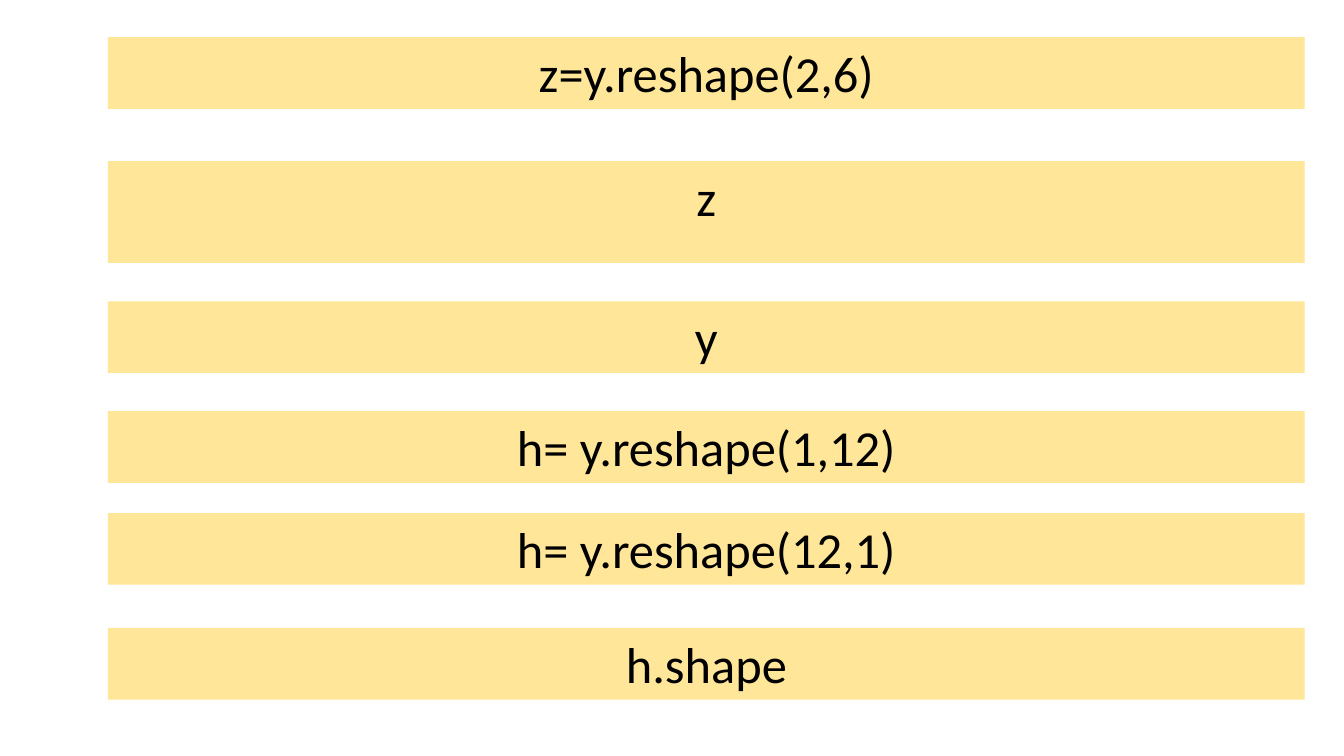
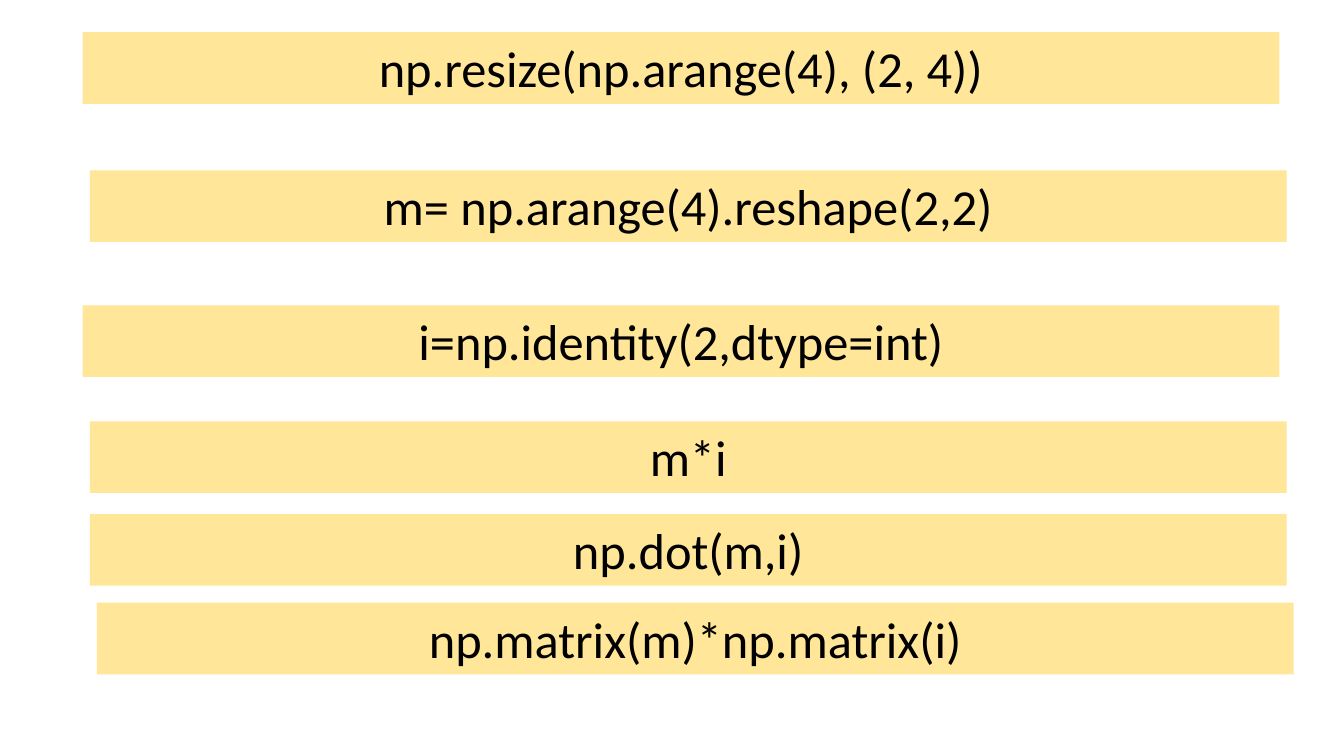
from dataclasses import dataclass

import pptx
import pptx.dml.color
import pptx.enum.shapes
import pptx.enum.text
import pptx.slide
import pptx.util


@dataclass(frozen=True)
class Theme:
    width: float = 13.33
    height: float = 7.5
    bar_fill: str = "FFE699"
    text_color: str = "000000"
    font: str = "Calibri"
    text_size: int = 36
    bar_width: float = 89.05
    bar_height: float = 9.47
    indent: float = 0.53


@dataclass(frozen=True)
class CodeBar:
    code: str
    top: float
    indents: int = 0
    height: float | None = None


@dataclass(frozen=True)
class CodeSlide:
    margin: float
    bars: tuple[CodeBar, ...]


THEME = Theme()

SLIDES = (
    CodeSlide(8.03, (
        CodeBar("z=y.reshape(2,6)", 4.93),
        CodeBar("z", 21.33, height=13.47),
        CodeBar("y", 39.87),
        CodeBar("h= y.reshape(1,12)", 54.4),
        CodeBar("h= y.reshape(12,1)", 67.87),
        CodeBar("h.shape", 83.07),
    )),
    CodeSlide(6.15, (
        CodeBar("np.resize(np.arange(4), (2, 4))", 4.27),
        CodeBar("m= np.arange(4).reshape(2,2)", 22.53, indents=1),
        CodeBar("i=np.identity(2,dtype=int)", 40.4),
        CodeBar("m*i", 55.73, indents=1),
        CodeBar("np.dot(m,i)", 68, indents=1),
        CodeBar("np.matrix(m)*np.matrix(i)", 79.73, indents=2),
    )),
)


def across(percent: float) -> pptx.util.Length:
    return pptx.util.Inches(THEME.width * percent / 100)


def down(percent: float) -> pptx.util.Length:
    return pptx.util.Inches(THEME.height * percent / 100)


def rgb(value: str) -> pptx.dml.color.RGBColor:
    return pptx.dml.color.RGBColor.from_string(value)


def draw_bar(s: pptx.slide.Slide, bar: CodeBar, margin: float) -> None:
    sp = s.shapes.add_shape(
        pptx.enum.shapes.MSO_SHAPE.RECTANGLE,
        across(margin + bar.indents * THEME.indent),
        down(bar.top),
        across(THEME.bar_width),
        down(bar.height or THEME.bar_height),
    )
    sp.shadow.inherit = False
    sp.fill.solid()
    sp.fill.fore_color.rgb = rgb(THEME.bar_fill)
    sp.line.fill.background()
    tf = sp.text_frame
    tf.word_wrap = True
    tf.vertical_anchor = pptx.enum.text.MSO_ANCHOR.TOP
    p = tf.paragraphs[0]
    p.alignment = pptx.enum.text.PP_ALIGN.CENTER
    r = p.add_run()
    r.text = bar.code
    r.font.name = THEME.font
    r.font.size = pptx.util.Pt(THEME.text_size)
    r.font.color.rgb = rgb(THEME.text_color)


def main() -> None:
    prs = pptx.Presentation()
    prs.slide_width = across(100)
    prs.slide_height = down(100)
    for code_slide in SLIDES:
        s = prs.slides.add_slide(prs.slide_layouts[6])
        for bar in code_slide.bars:
            draw_bar(s, bar, code_slide.margin)
    prs.save("out.pptx")


if __name__ == "__main__":
    main()
